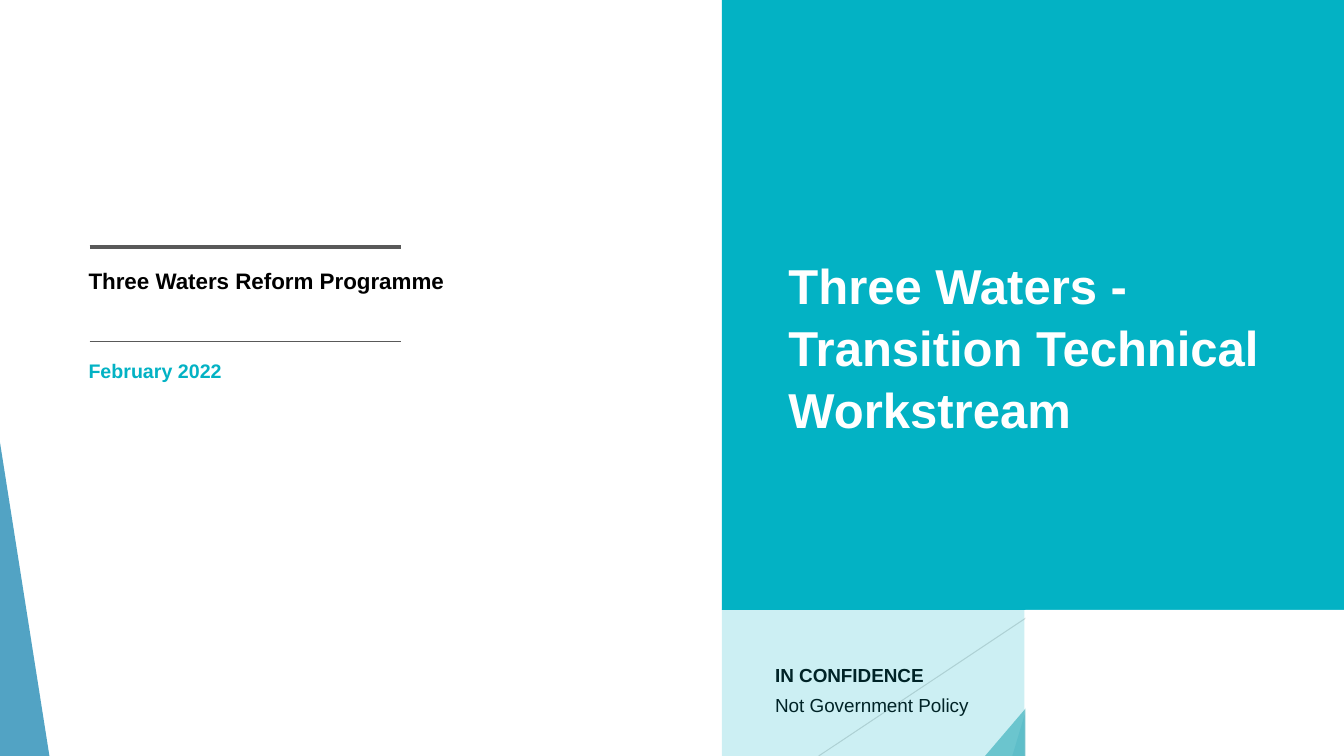
"""Build the cover slide of the Three Waters transition workstream deck."""
from lxml import etree
from pptx import Presentation
from pptx.dml.color import RGBColor
from pptx.enum.shapes import MSO_CONNECTOR, MSO_SHAPE
from pptx.enum.text import MSO_ANCHOR, MSO_AUTO_SIZE, PP_ALIGN
from pptx.oxml.ns import qn
from pptx.util import Inches, Pt

RECT, TRIANGLE = MSO_SHAPE.RECTANGLE, MSO_SHAPE.ISOSCELES_TRIANGLE
STRAIGHT = MSO_CONNECTOR.STRAIGHT
TOP, LEFT, NO_FIT = MSO_ANCHOR.TOP, PP_ALIGN.LEFT, MSO_AUTO_SIZE.NONE
TEAL = RGBColor(0x03, 0xB2, 0xC4)
BLUE = RGBColor(0x34, 0x94, 0xBA)
AQUA = RGBColor(0x58, 0xB6, 0xC0)
PALE_GREY = RGBColor(0xD9, 0xD9, 0xD9)
DARK_GREY = RGBColor(0x59, 0x59, 0x59)
BLACK = RGBColor(0, 0, 0)
WHITE = RGBColor(0xFF, 0xFF, 0xFF)


def write(sp, box, lines, size, color, spacing, after=0):
    sp.left, sp.top, sp.width, sp.height = [Inches(v) for v in box]
    tf = sp.text_frame
    tf.word_wrap, tf.auto_size, tf.vertical_anchor = True, NO_FIT, TOP
    for i, (text, bold) in enumerate(lines):
        p = tf.add_paragraph() if i else tf.paragraphs[0]
        p.alignment, p.line_spacing, p.space_after = LEFT, spacing, Pt(after)
        r = p.add_run()
        r.text = text
        r.font.name, r.font.size, r.font.bold = "Arial", Pt(size), bold
        r.font.color.rgb = color


def paint(sp, color, opacity=100):
    sp.shadow.inherit = False
    sp.line.fill.background()
    sp.fill.solid()
    sp.fill.fore_color.rgb = color
    if opacity < 100:
        rgb = sp.element.spPr.find(qn("a:solidFill")).find(qn("a:srgbClr"))
        etree.SubElement(rgb, qn("a:alpha")).set("val", str(opacity * 1000))


prs = Presentation()
prs.slide_width, prs.slide_height = Inches(13.33), Inches(7.5)
slide = prs.slides.add_slide(prs.slide_layouts[5])
shapes = slide.shapes
title = shapes.title

rules = [
    (13.33, 4.03, 8.12, 7.5, PALE_GREY, 0.75),
    (0.89, 2.45, 3.98, 2.45, DARK_GREY, 2.25),
    (0.89, 3.39, 3.98, 3.39, DARK_GREY, 0.5),
]
for x1, y1, x2, y2, color, width in rules:
    line = shapes.add_connector(STRAIGHT, Inches(x1), Inches(y1), Inches(x2), Inches(y2))
    line.line.color.rgb, line.line.width = color, Pt(width)
    etree.SubElement(line.element.spPr, qn("a:effectLst"))

facet = shapes.build_freeform(Inches(12.28), Inches(0))
corners = [(13.33, 0), (13.33, 7.5), (10.04, 7.5)]
facet.add_line_segments([(Inches(x), Inches(y)) for x, y in corners], close=True)
paint(facet.convert_to_shape(), BLUE, 30)

panels = [
    (TRIANGLE, 9.77, 3.33, 3.56, 4.17, AQUA, 72, 1),
    (TRIANGLE, 0, 4.39, 0.49, 3.11, BLUE, 85, 0),
    (RECT, 7.16, 0, 6.17, 6.05, TEAL, 100, None),
    (RECT, 10.17, 6.05, 3.16, 1.45, WHITE, 100, None),
]
for kind, x, y, w, h, color, opacity, apex in panels:
    sp = shapes.add_shape(kind, Inches(x), Inches(y), Inches(w), Inches(h))
    paint(sp, color, opacity)
    if apex is not None:
        sp.adjustments[0] = apex

labels = [
    ((0.78, 2.58, 4.54, 0.66), [("Three Waters Reform Programme", True)], 16, BLACK, Pt(21), 0),
    ((0.78, 3.63, 2.26, 0.25), [("February 2022", True)], 14, TEAL, Pt(8.6), 6),
    ((7.59, 6.47, 2.26, 0.66), [("IN CONFIDENCE", True), ("Not Government Policy", False)],
     13.5, BLACK, Pt(21), 0),
]
for box, lines, size, color, spacing, after in labels:
    write(shapes.add_textbox(0, 0, 0, 0), box, lines, size, color, spacing, after)

write(title, (7.72, 2.46, 5.39, 2.46),
      [("Three Waters - Transition Technical Workstream", True)], 35, WHITE, 1.05)
title.element.getparent().append(title.element)

wash = shapes.add_shape(RECT, Inches(7.16), Inches(6.04), Inches(3), Inches(1.46))
paint(wash, TEAL, 20)

prs.save("out.pptx")
